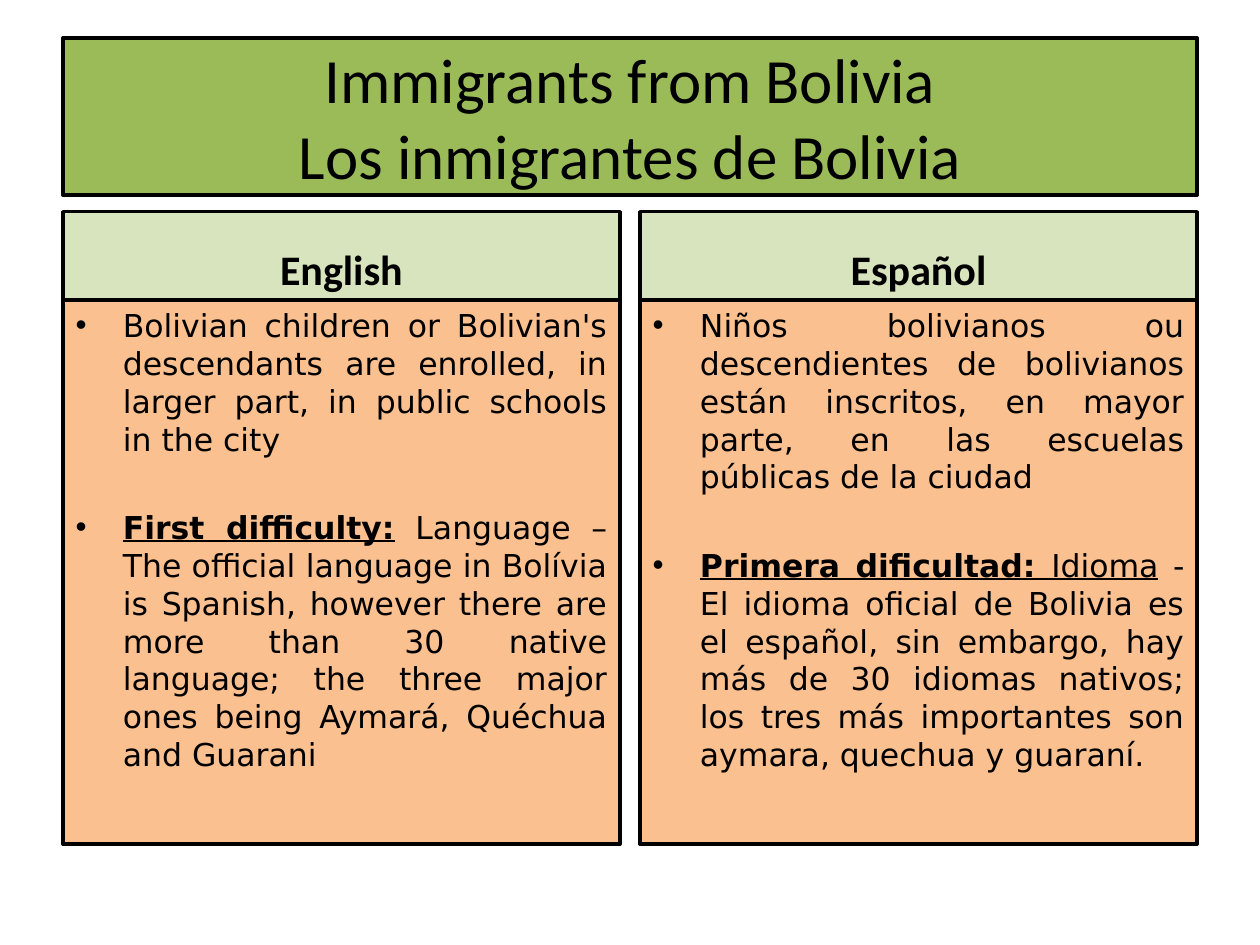
from pptx import Presentation
from pptx.dml.color import RGBColor
from pptx.enum.text import MSO_ANCHOR, MSO_AUTO_SIZE, PP_ALIGN
from pptx.util import Pt

CENTER, JUSTIFY = PP_ALIGN.CENTER, PP_ALIGN.JUSTIFY
TOP, MIDDLE, BOTTOM = MSO_ANCHOR.TOP, MSO_ANCHOR.MIDDLE, MSO_ANCHOR.BOTTOM
NO_FIT = MSO_AUTO_SIZE.NONE

BLACK, GREEN, PALE, PEACH = "000000", "9BBB59", "D7E4BD", "FAC090"
HEAD = 50.4
GAP = 29

TITLE = {"name": "Calibri", "size": Pt(36)}
LABEL = {"name": "Calibri", "size": Pt(24), "bold": True}
PLAIN = {"name": "DejaVu Sans", "size": Pt(18)}
STRONG = {**PLAIN, "bold": True, "underline": True}
UNDER = {**PLAIN, "underline": True}

ENGLISH = [
    [("Bolivian children or Bolivian's descendants are enrolled, in larger "
      "part, in public schools in the city", PLAIN)],
    [("First difficulty:", STRONG),
     (" Language – The official language in Bolívia is Spanish, however there "
      "are more than 30 native language; the three major ones being Aymará, "
      "Quéchua and Guarani", PLAIN)],
]
SPANISH = [
    [("Niños bolivianos ou descendientes de bolivianos están inscritos, en "
      "mayor parte, en las escuelas públicas de la ciudad", PLAIN)],
    [("Primera dificultad: ", STRONG),
     ("Idioma", UNDER),
     (" - El idioma oficial de Bolivia es el español, sin embargo, hay más de "
      "30 idiomas nativos; los tres más importantes son aymara, quechua y "
      "guaraní.", PLAIN)],
]


def color(code):
    return RGBColor.from_string(code)


def style(font, form):
    for key, value in form.items():
        setattr(font, key, value)
    font.color.rgb = color(BLACK)


def panel(shape, box, fill, anchor):
    """Place and frame a placeholder; return its text frame."""
    for key, value in zip(("left", "top", "width", "height"), box):
        setattr(shape, key, Pt(value))
    shape.fill.solid()
    shape.fill.fore_color.rgb = color(fill)
    shape.line.color.rgb = color(BLACK)
    shape.line.width = Pt(2)
    frame = shape.text_frame
    frame.auto_size = NO_FIT
    frame.vertical_anchor = anchor
    return frame


def heading(shape, box, text, fill, anchor, form):
    frame = panel(shape, box, fill, anchor)
    frame.text = text
    para = frame.paragraphs[0]
    para.alignment = CENTER
    for run in para.runs:
        style(run.font, form)


def points(shape, box, items):
    frame = panel(shape, box, PEACH, TOP)
    for i, parts in enumerate(items):
        para = frame.add_paragraph() if i else frame.paragraphs[0]
        para.alignment = JUSTIFY
        if i:
            para.space_before = Pt(GAP)
        for text, form in parts:
            run = para.add_run()
            run.text = text
            style(run.font, form)


def column(label, body, box, name, items):
    left, top, width, height = box
    heading(label, (left, top, width, HEAD), name, PALE, BOTTOM, LABEL)
    points(body, (left, top + HEAD, width, height - HEAD), items)


def main():
    deck = Presentation()
    deck.slide_width, deck.slide_height = Pt(720), Pt(540)
    slide = deck.slides.add_slide(deck.slide_layouts.get_by_name("Comparison"))
    title, *holders = slide.placeholders
    heading(title, (36, 21.6, 648, 90),
            "Immigrants from Bolivia\vLos inmigrantes de Bolivia",
            GREEN, MIDDLE, TITLE)
    texts = [("English", ENGLISH), ("Español", SPANISH)]
    for i, (name, items) in enumerate(texts):
        label, body = holders[2 * i:2 * i + 2]
        box = (36 + 329.76 * i, 120.96, 318.24, 361.44)
        column(label, body, box, name, items)
    deck.save("out.pptx")


if __name__ == "__main__":
    main()
